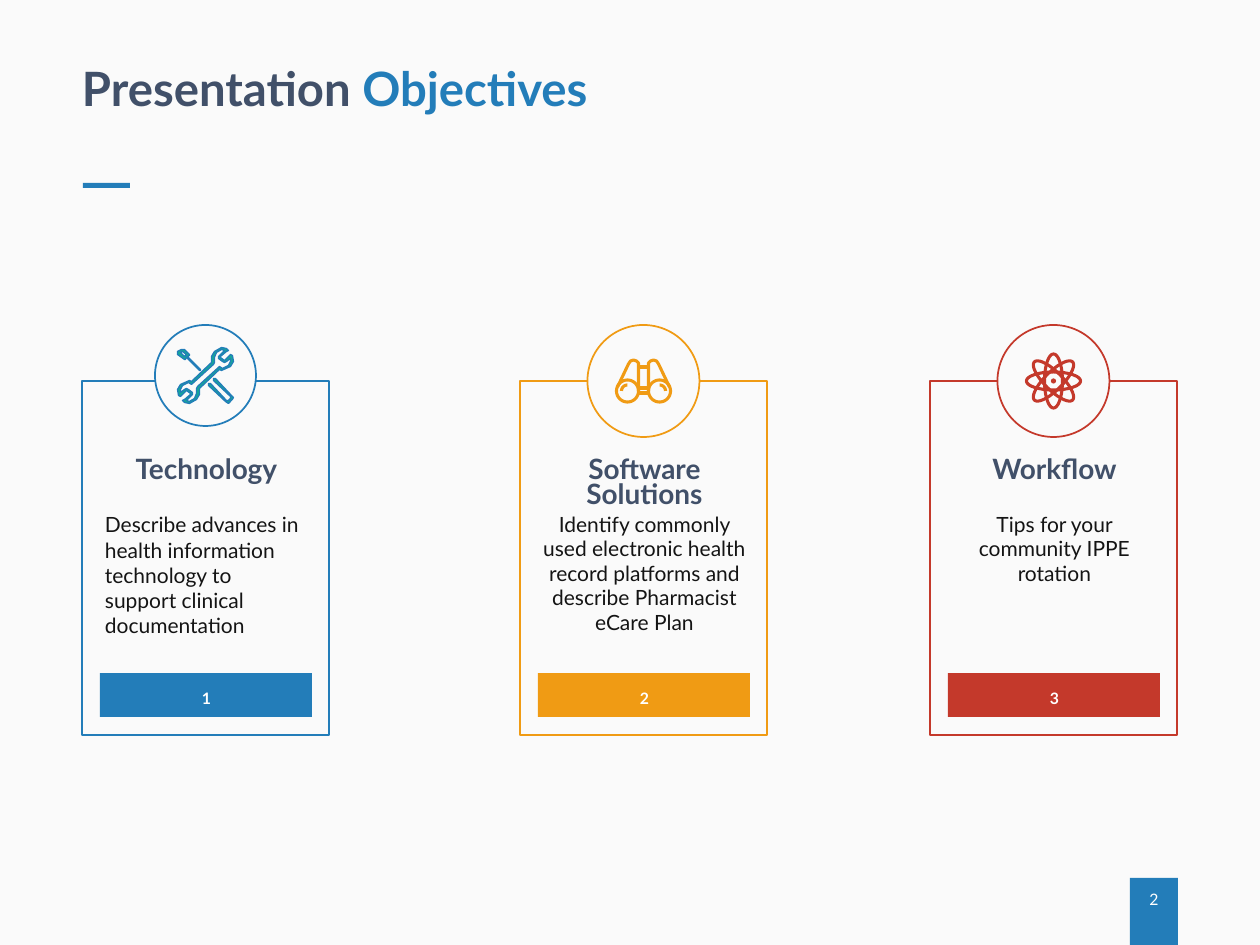
from dataclasses import dataclass
from math import cos, pi, sin

from pptx import Presentation
from pptx.dml.color import RGBColor
from pptx.enum.shapes import MSO_SHAPE as Preset
from pptx.enum.text import MSO_ANCHOR as Anchor, PP_ALIGN as Align
from pptx.util import Pt

NAVY = RGBColor(0x41, 0x50, 0x69)
BLUE = RGBColor(0x23, 0x7D, 0xB9)
ORANGE = RGBColor(0xF0, 0x9B, 0x14)
RED = RGBColor(0xC4, 0x39, 0x2B)
TEAL = RGBColor(0x14, 0xAA, 0x96)
INK = RGBColor(0x14, 0x14, 0x14)
PAPER = RGBColor(0xFA, 0xFA, 0xFA)
WHITE = RGBColor(0xFF, 0xFF, 0xFF)

EMU_PER_PX = 914400 / 126
CARD_TOP, CARD_WIDTH, CARD_HEIGHT = 381, 247, 354
BADGE_TOP = 325

JAW_OUTER = [(14, -6), (16, -5), (25, -9), (28, -14), (27, -20), (25, -21),
             (19, -15), (15, -18), (15, -19), (21, -24), (23, -25), (21, -27),
             (16, -28), (9, -24), (6, -19), (6, -13)]
JAW_INNER = [(14, -9), (17, -7), (23, -10), (25, -14), (25, -17), (21, -14),
             (19, -13), (17, -14), (13, -17), (13, -19), (14, -20), (19, -25),
             (16, -26), (11, -23), (9, -18), (9, -13), (8, -11)]
HANDLE = [(10, 3), (8, 3), (8, 5), (25, 21), (25, 23), (23, 25), (21, 25),
          (5, 8), (3, 8), (3, 10), (20, 26), (23, 28), (25, 26), (27, 24),
          (28, 22), (26, 20)]
DRIVER = [(-21, -16), (-20, -16), (-19, -18), (-6, -5), (-5, -5), (-5, -6),
          (-18, -19), (-16, -20), (-16, -21), (-21, -26), (-24, -26),
          (-28, -24), (-28, -21)]
DRIVER_TIP = [(-23, -24), (-19, -21), (-21, -19), (-25, -23)]
BARREL = [(-26, 6), (-15, -17), (-13, -20), (-10, -21), (-7, -20), (-5, -18),
          (-5, -15), (-5, 10)]


def px(length):
    return round(length * EMU_PER_PX)


def arc(center, radii, start=0, sweep=360, tilt=0):
    turn = tilt * pi / 180
    points = []
    for step in range(49):
        angle = (start + sweep * step / 48) * pi / 180
        x, y = radii[0] * cos(angle), radii[1] * sin(angle)
        points.append((center[0] + x * cos(turn) - y * sin(turn),
                       center[1] + x * sin(turn) + y * cos(turn)))
    return points


def with_half_turn(points):
    return points + [(-x, -y) for x, y in points]


def mirrored(points):
    return [(-x, y) for x, y in points]


@dataclass
class Painter:
    page: object
    font: str = "Lato"

    def style(self, shape, fill=None, line=None, width=1):
        shape.shadow.inherit = False
        if fill is None:
            shape.fill.background()
        else:
            shape.fill.solid()
            shape.fill.fore_color.rgb = fill
        if line is None:
            shape.line.fill.background()
        else:
            shape.line.color.rgb = line
            shape.line.width = Pt(width)

    def shape(self, preset, area, fill=None, line=None):
        box = self.page.shapes.add_shape(preset, *map(px, area))
        self.style(box, fill, line)

    def outline(self, center, contours, fill, line, width, close):
        placed = [[(px(center[0] + x), px(center[1] + y)) for x, y in contour]
                  for contour in contours]
        builder = self.page.shapes.build_freeform(*placed[0][0], scale=1)
        for index, contour in enumerate(placed):
            if index:
                builder.move_to(*contour[0])
            builder.add_line_segments(contour[1:], close=close)
        self.style(builder.convert_to_shape(), fill, line, width)

    def fill_text(self, box, spans, size, bold, align):
        frame = box.text_frame
        frame.word_wrap = True
        frame.vertical_anchor = Anchor.TOP
        frame.margin_left = frame.margin_right = 0
        frame.margin_top = frame.margin_bottom = 0
        para = frame.paragraphs[0]
        para.alignment = align
        for words, color in spans:
            span = para.add_run()
            span.text = words
            span.font.name = self.font
            span.font.size = Pt(size)
            span.font.bold = bold
            span.font.color.rgb = color
        return para

    def title(self, area, spans):
        box = self.page.shapes.title
        box.left, box.top, box.width, box.height = map(px, area)
        para = self.fill_text(box, spans, 27, True, Align.LEFT)
        para.line_spacing = 0.9
        para.space_before = Pt(9.2)

    def text(self, area, words, size, color, bold=False, align=Align.CENTER, leading=Pt(14)):
        box = self.page.shapes.add_textbox(*map(px, area))
        para = self.fill_text(box, [(words, color)], size, bold, align)
        para.line_spacing = leading

    def tools(self, center):
        wrench = [with_half_turn(JAW_OUTER), with_half_turn(JAW_INNER)]
        for contours in (wrench, [HANDLE], [DRIVER, DRIVER_TIP]):
            self.outline(center, contours, TEAL, BLUE, 0.75, True)

    def binoculars(self, center):
        side = [BARREL, arc((-16, 10), (11, 11)), arc((-16, 10), (6, 6), 180, 90)]
        bridge = [[(-5, y), (5, y)] for y in (-14, 7, 12)]
        contours = side + [mirrored(part) for part in side] + bridge
        self.outline(center, contours, None, ORANGE, 1.75, False)

    def atom(self, center):
        orbits = [arc((0, 0), (27, 9), tilt=tilt) for tilt in (0, 45, 90, 135)]
        nucleus = arc((0, 0), (1, 1))
        self.outline(center, orbits + [nucleus], None, RED, 1.75, False)

    def card(self, left, number, color, heading, body, badge, icon, **body_style):
        middle = left + CARD_WIDTH / 2
        self.shape(Preset.RECTANGLE, (left, CARD_TOP, CARD_WIDTH, CARD_HEIGHT), line=color)
        self.shape(Preset.OVAL, (middle - badge / 2, BADGE_TOP, badge, badge), PAPER, color)
        icon((middle, BADGE_TOP + badge / 2))
        self.text((left + 23, 461, 203, 38), heading, 16, NAVY, True)
        self.text((left + 23, 512, 203, 102), body, 12, INK, **body_style)
        self.shape(Preset.RECTANGLE, (left + 18, 673, 212, 44), color)
        self.text((left + 23, 683, 203, 22), str(number), 9, WHITE, True)


def main():
    deck = Presentation()
    deck.slide_width, deck.slide_height = px(1260), px(945)
    page = deck.slides.add_slide(deck.slide_layouts[5])
    page.background.fill.solid()
    page.background.fill.fore_color.rgb = PAPER
    painter = Painter(page)

    painter.shape(Preset.RECTANGLE, (1130, 878, 48, 67), BLUE)
    painter.text((1131, 890, 46, 19), "2", 9, WHITE, leading=1.0)
    painter.shape(Preset.RECTANGLE, (83, 183, 47, 5), BLUE)
    painter.title((82, 66, 1096, 67), [("Presentation ", NAVY), ("Objectives", BLUE)])
    painter.card(82, 1, BLUE, "Technology",
                 "Describe advances in health information technology to support "
                 "clinical documentation",
                 101, painter.tools, align=Align.LEFT, leading=1.0)
    painter.card(520, 2, ORANGE, "Software Solutions",
                 "Identify commonly used electronic health record platforms and "
                 "describe Pharmacist eCare Plan",
                 112, painter.binoculars)
    painter.card(930, 3, RED, "Workflow", "Tips for your community IPPE rotation",
                 112, painter.atom)
    deck.save("out.pptx")


if __name__ == "__main__":
    main()
